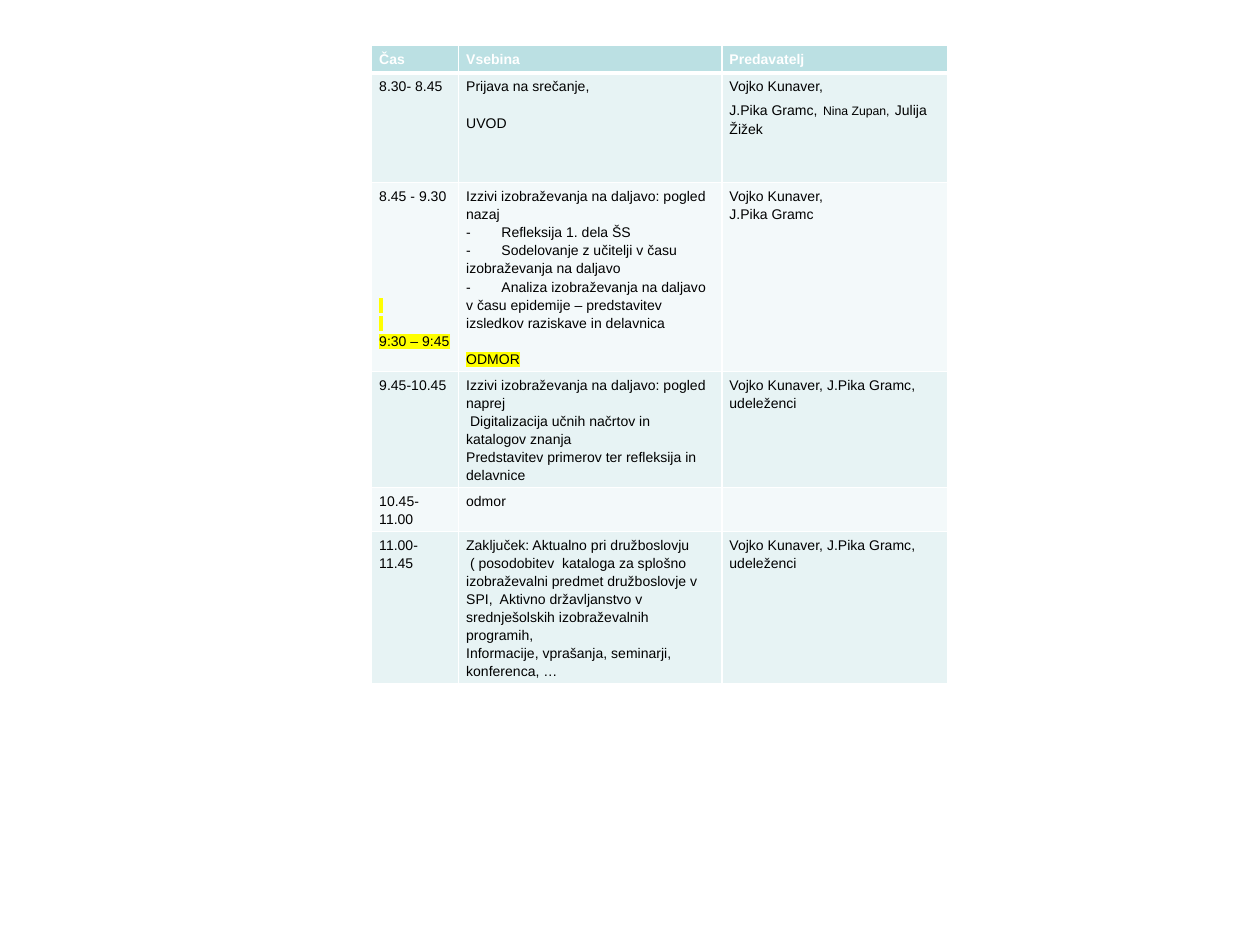
from dataclasses import dataclass

import pptx
import pptx.dml.color
import pptx.oxml
import pptx.oxml.ns
import pptx.util
from pptx.util import Inches

RGBColor = pptx.dml.color.RGBColor
WHITE = RGBColor(0xFF, 0xFF, 0xFF)
BLACK = RGBColor(0, 0, 0)
YELLOW = RGBColor(0xFF, 0xFF, 0x00)
HEADER_FILL = RGBColor(0xBB, 0xE0, 0xE3)
BAND_FILLS = (RGBColor(0xF3, 0xF9, 0xFA), RGBColor(0xE7, 0xF3, 0xF4))

FONT_NAME = "Arial"
FONT_SIZE = 8
LINE_PITCH = 10.35
DASH_TAB = Inches(0.28)
COLUMN_WIDTHS = (0.69, 2.09, 1.79)
ROW_HEIGHTS = (0.22, 0.87, 1.37, 0.79, 0.21, 1.08)


@dataclass
class Line:
    runs: tuple
    lines_before: int = 0
    highlighted: bool = False


def line(text, lines_before=0, highlighted=False):
    return Line(((text, FONT_SIZE),), lines_before, highlighted)


SPEAKERS = Line((("J.Pika Gramc,", 8), (" ", 11), ("Nina Zupan,", 7),
                 (" ", 11), ("Julija Žižek", 8)))

SCHEDULE = (
    (["Čas"], ["Vsebina"], ["Predavatelj"]),
    (["8.30- 8.45"],
     ["Prijava na srečanje,", line("UVOD", 1)],
     ["Vojko Kunaver,", SPEAKERS]),
    (["8.45 - 9.30", line(" ", 5, True), line(" ", 0, True),
      line("9:30 – 9:45", 0, True)],
     ["Izzivi izobraževanja na daljavo: pogled nazaj",
      "-\tRefleksija 1. dela ŠS",
      "-\tSodelovanje z učitelji v času izobraževanja na daljavo",
      "-\tAnaliza izobraževanja na daljavo v času epidemije – predstavitev "
      "izsledkov raziskave in delavnica",
      line("ODMOR", 1, True)],
     ["Vojko Kunaver,", "J.Pika Gramc"]),
    (["9.45-10.45"],
     ["Izzivi izobraževanja na daljavo: pogled naprej",
      " Digitalizacija učnih načrtov in katalogov znanja",
      "Predstavitev primerov ter refleksija in",
      "delavnice"],
     ["Vojko Kunaver, J.Pika Gramc,", "udeleženci"]),
    (["10.45-11.00"], ["odmor"], [""]),
    (["11.00-11.45"],
     ["Zaključek: Aktualno pri družboslovju",
      " ( posodobitev  kataloga za splošno izobraževalni predmet družboslovje "
      "v SPI,  Aktivno državljanstvo v srednješolskih izobraževalnih programih,",
      "Informacije, vprašanja, seminarji, konferenca, …"],
     ["Vojko Kunaver, J.Pika Gramc, udeleženci"]),
)


def add_element(parent, tag, **attributes):
    element = pptx.oxml.parse_xml(f"<{tag} {pptx.oxml.ns.nsdecls('a')}/>")
    for name, value in attributes.items():
        element.set(name, str(value))
    parent.append(element)
    return element


def add_borders(cell, bottom_width):
    properties = cell._tc.get_or_add_tcPr()
    widths = {"a:lnL": 1, "a:lnR": 1, "a:lnT": 1, "a:lnB": bottom_width}
    for tag, width in widths.items():
        border = add_element(properties, tag, w=int(pptx.util.Pt(width)))
        fill = add_element(border, "a:solidFill")
        add_element(fill, "a:srgbClr", val=WHITE)


def highlight(run):
    marker = add_element(run._r.get_or_add_rPr(), "a:highlight")
    add_element(marker, "a:srgbClr", val=YELLOW)


def write_line(paragraph, content, is_header):
    paragraph.line_spacing = 1.15
    if content.lines_before:
        paragraph.space_before = pptx.util.Pt(content.lines_before * LINE_PITCH)
    if any("\t" in text for text, size in content.runs):
        tabs = add_element(paragraph._p.get_or_add_pPr(), "a:tabLst")
        add_element(tabs, "a:tab", pos=int(DASH_TAB), algn="l")
    font = paragraph.font
    font.name = FONT_NAME
    font.size = pptx.util.Pt(FONT_SIZE)
    font.bold = is_header
    font.color.rgb = WHITE if is_header else BLACK
    for text, size in content.runs:
        if not text:
            continue
        run = paragraph.add_run()
        run.text = text
        if size != FONT_SIZE:
            run.font.size = pptx.util.Pt(size)
        if content.highlighted:
            highlight(run)


def fill_cell(cell, contents, row_index):
    is_header = row_index == 0
    cell.margin_left = cell.margin_right = Inches(0.06)
    cell.margin_top = cell.margin_bottom = Inches(0.03)
    add_borders(cell, 3 if is_header else 1)
    cell.fill.solid()
    cell.fill.fore_color.rgb = HEADER_FILL if is_header else BAND_FILLS[row_index % 2]
    for index, content in enumerate(contents):
        frame = cell.text_frame
        paragraph = frame.add_paragraph() if index else frame.paragraphs[0]
        if isinstance(content, str):
            content = line(content)
        write_line(paragraph, content, is_header)


def add_schedule(slide):
    shape = slide.shapes.add_table(
        len(ROW_HEIGHTS), len(COLUMN_WIDTHS), Inches(2.95), Inches(0.36),
        Inches(sum(COLUMN_WIDTHS)), Inches(sum(ROW_HEIGHTS)))
    table = shape.table
    for column, width in zip(table.columns, COLUMN_WIDTHS):
        column.width = Inches(width)
    for row_index, (row, height) in enumerate(zip(table.rows, ROW_HEIGHTS)):
        row.height = Inches(height)
        for cell, contents in zip(row.cells, SCHEDULE[row_index]):
            fill_cell(cell, contents, row_index)


def main():
    presentation = pptx.Presentation()
    presentation.slide_width = Inches(10)
    presentation.slide_height = Inches(7.5)
    slide = presentation.slides.add_slide(presentation.slide_layouts[6])
    add_schedule(slide)
    presentation.save("out.pptx")


if __name__ == "__main__":
    main()
